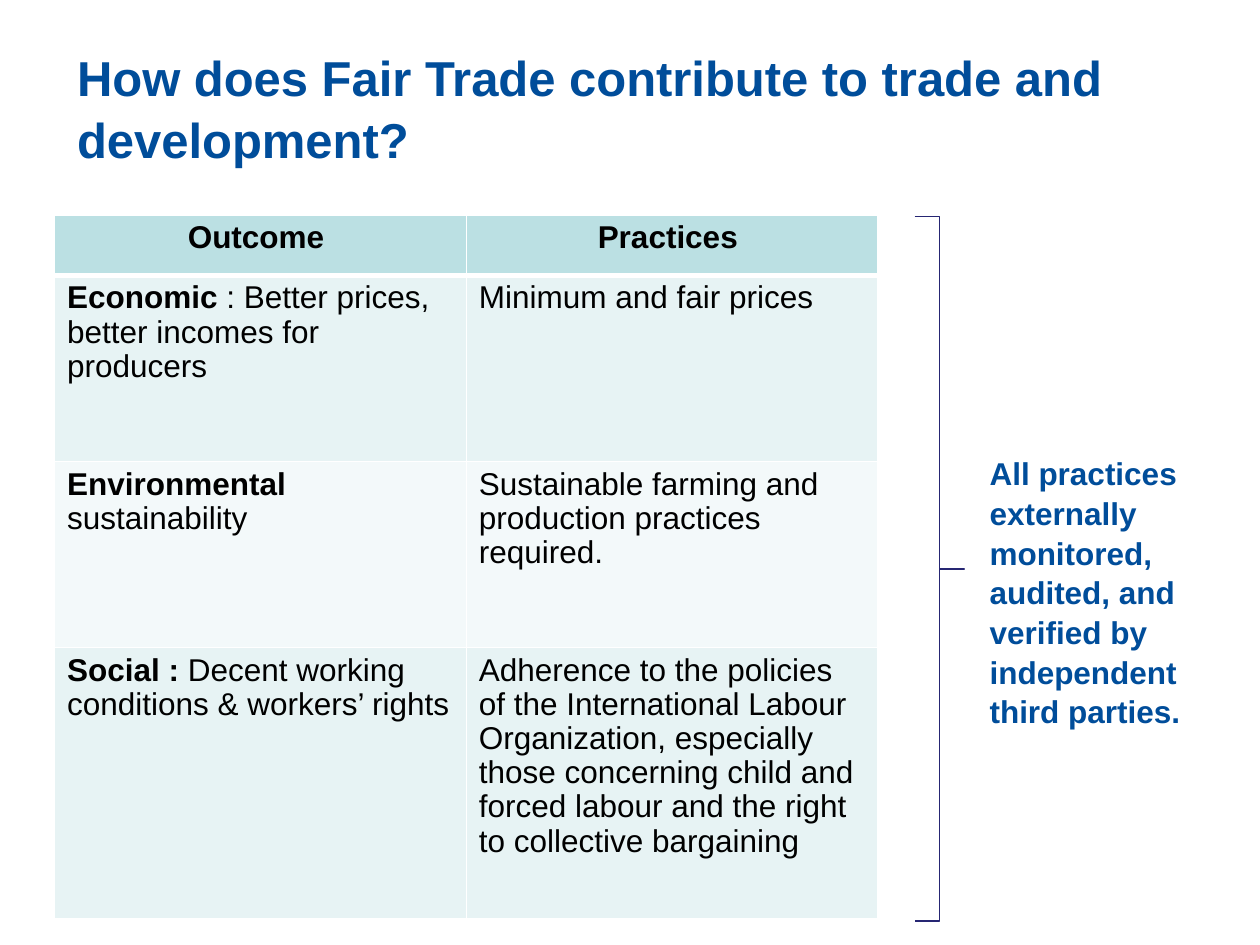
from lxml import etree
from pptx import Presentation
from pptx.dml.color import RGBColor
from pptx.enum.shapes import MSO_SHAPE
from pptx.enum.text import MSO_ANCHOR, MSO_AUTO_SIZE, PP_ALIGN
from pptx.oxml.ns import qn
from pptx.util import Cm, Pt

BRACE = MSO_SHAPE.RIGHT_BRACE
MIDDLE = MSO_ANCHOR.MIDDLE
GROW = MSO_AUTO_SIZE.SHAPE_TO_FIT_TEXT
LEFT, CENTER = PP_ALIGN.LEFT, PP_ALIGN.CENTER

COLORS = {
    "blue": "004D9A",
    "text": "000000",
    "header": "BBE0E3",
    "dark band": "E7F3F4",
    "light band": "F3F9FA",
    "border": "FFFFFF",
    "brace": "262673",
}


def write(paragraph, parts, size, color, spacing, align=LEFT):
    """Fill a paragraph with (text, bold) parts in one size and colour."""
    paragraph.alignment = align
    paragraph.line_spacing = spacing
    for text, bold in parts:
        run = paragraph.add_run()
        run.text = text
        run.font.name = "Arial"
        run.font.size = Pt(size)
        run.font.bold = bold
        run.font.color.rgb = RGBColor.from_string(COLORS[color])


def set_borders(cell, top, bottom):
    """Draw the cell's borders; top and bottom are widths in points."""
    properties = cell._tc.get_or_add_tcPr()
    widths = {"lnL": 1, "lnR": 1, "lnT": top, "lnB": bottom}
    for position, (side, width) in enumerate(widths.items()):
        line = etree.Element(qn(f"a:{side}"), w=str(Pt(width)))
        fill = etree.SubElement(line, qn("a:solidFill"))
        etree.SubElement(fill, qn("a:srgbClr"), val=COLORS["border"])
        properties.insert(position, line)


prs = Presentation()
prs.slide_width, prs.slide_height = Cm(25.4), Cm(19.05)
slide = prs.slides.add_slide(prs.slide_layouts[5])

# Title
title = slide.shapes.title
title.left, title.top, title.width, title.height = Cm(1.3), Cm(0.56), Cm(22.86), Cm(3.18)
title.text_frame.vertical_anchor = MIDDLE
write(title.text_frame.paragraphs[0],
      [("How does Fair Trade contribute to trade and development? ", True)],
      28, "blue", 1.05)

# Outcomes and practices
ROWS = [
    ([("Outcome ", True)], [("Practices ", True)]),
    ([("Economic", True), (" : Better prices, better incomes for producers", False)],
     [("Minimum and fair prices ", False)]),
    ([("Environmental ", True), ("sustainability", False)],
     [("Sustainable farming and production practices required. ", False)]),
    ([("Social : ", True), ("Decent working conditions & workers’ rights", False)],
     [("Adherence to the policies of the International Labour Organization, "
       "especially those concerning child and forced labour and the right "
       "to collective bargaining", False)]),
]
ROW_HEIGHTS = [1.22, 3.75, 3.75, 5.48]
BANDS = ["header", "dark band", "light band", "dark band"]

outcomes = slide.shapes.add_table(len(ROWS), 2, Cm(1.1), Cm(4.33),
                                  Cm(16.6), Cm(sum(ROW_HEIGHTS))).table
for r, (row, height, band) in enumerate(zip(ROWS, ROW_HEIGHTS, BANDS)):
    outcomes.rows[r].height = Cm(height)
    for c, parts in enumerate(row):
        cell = outcomes.cell(r, c)
        cell.fill.solid()
        cell.fill.fore_color.rgb = RGBColor.from_string(COLORS[band])
        set_borders(cell, top=3 if r == 1 else 1, bottom=3 if r == 0 else 1)
        write(cell.text_frame.paragraphs[0], parts, 18, "text", 0.97,
              CENTER if r == 0 else LEFT)

# Monitoring remark, bracketed to the table
monitoring = slide.shapes.add_group_shape()
remark = monitoring.shapes.add_textbox(Cm(19.7), Cm(8.23), Cm(5.8), Cm(5.64))
remark.text_frame.word_wrap = True
remark.text_frame.auto_size = GROW
remark.text_frame.margin_top = Cm(0.89)
write(remark.text_frame.paragraphs[0],
      [("All practices externally monitored, audited, and verified by "
        "independent third parties.", True)],
      18, "blue", 1.05)

brace = monitoring.shapes.add_shape(BRACE, Cm(18.44), Cm(4.37), Cm(1), Cm(14.2))
brace.adjustments[0] = 0
brace.adjustments[1] = 0.5
brace.shadow.inherit = False
brace.fill.background()
brace.line.color.rgb = RGBColor.from_string(COLORS["brace"])
brace.line.width = Pt(0.75)

prs.save("out.pptx")
